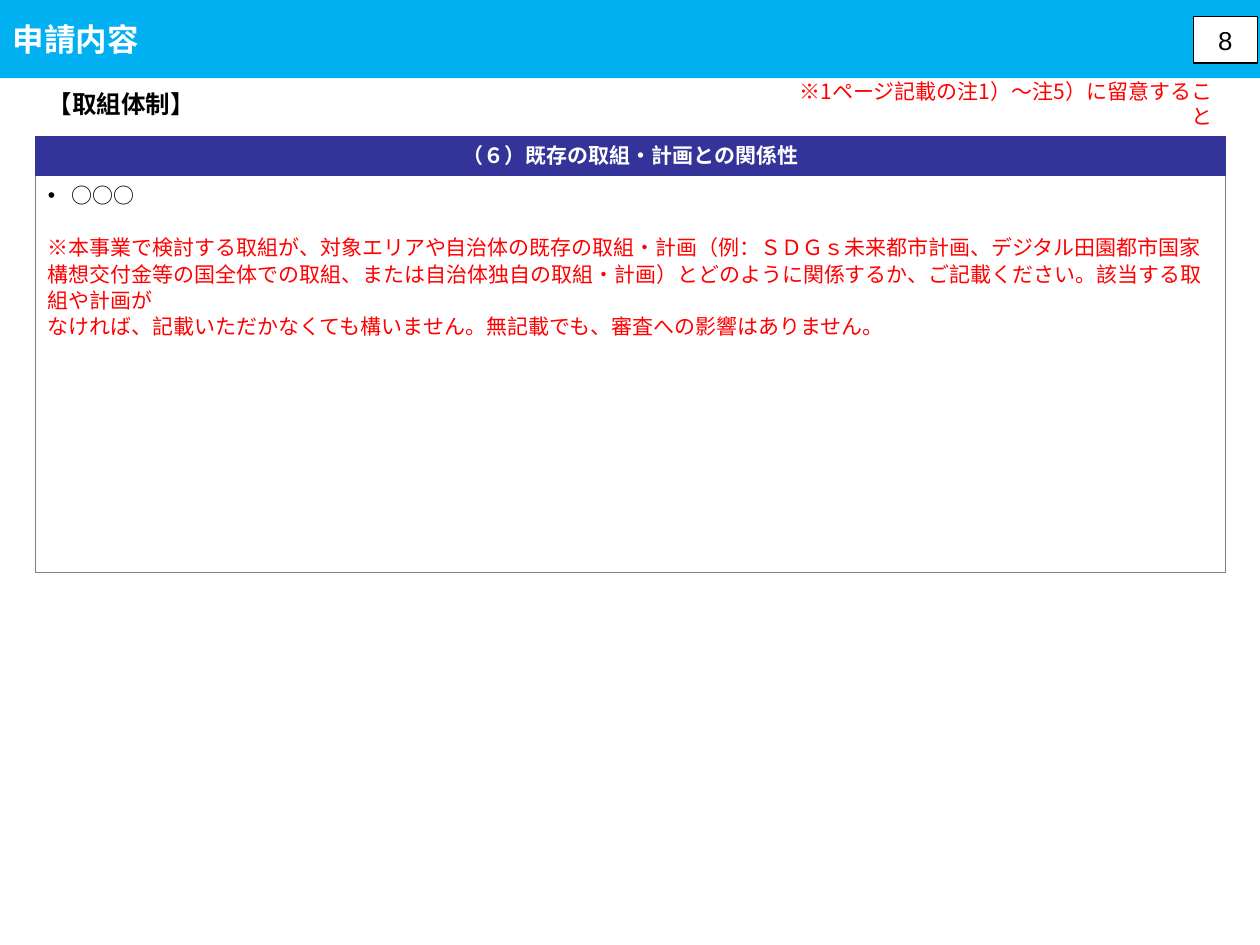
from dataclasses import dataclass

from pptx import Presentation
from pptx.dml.color import RGBColor
from pptx.enum.shapes import MSO_SHAPE as Shape
from pptx.enum.text import MSO_ANCHOR as Anchor, MSO_AUTO_SIZE as AutoSize, PP_ALIGN as Align
from pptx.oxml.ns import qn
from pptx.util import Inches, Pt


@dataclass(frozen=True)
class Theme:
    japanese: str = "Noto Sans CJK JP"
    latin: str = "Arial"
    sky: str = "00B0F0"
    navy: str = "333399"
    gray: str = "808080"
    red: str = "FF0000"
    black: str = "000000"
    white: str = "FFFFFF"
    title: float = 18
    subtitle: float = 14
    number: float = 14.8
    body: float = 12


theme = Theme()


def write(shape, text, size=theme.body, color=theme.black, bold=False, font=theme.japanese,
          align=Align.LEFT, anchor=Anchor.TOP, bullet=None, line=None, before=0):
    """Fill the empty first paragraph of a shape, or add one after it."""
    frame = shape.text_frame
    frame.word_wrap, frame.auto_size, frame.vertical_anchor = True, AutoSize.NONE, anchor
    paragraph = frame.add_paragraph() if frame.text else frame.paragraphs[0]
    paragraph.text = text
    properties = paragraph._p.get_or_add_pPr()
    indent = Inches(0.19) if bullet else 0
    properties.set("marL", str(indent))
    properties.set("indent", str(-indent))
    if bullet:
        mark_font = properties.makeelement(qn("a:buFont"), {"typeface": theme.latin})
        mark = properties.makeelement(qn("a:buChar"), {"char": bullet})
        properties.extend([mark_font, mark])
    else:
        properties.append(properties.makeelement(qn("a:buNone"), {}))
    paragraph.alignment = align
    paragraph.space_before = Pt(before)
    if line:
        paragraph.line_spacing = Pt(line)
    for run in paragraph.runs:
        run.font.size, run.font.bold, run.font.name = Pt(size), bold, font
        run.font.color.rgb = RGBColor.from_string(color)
        east_asian = run.font._element.makeelement(qn("a:ea"), {"typeface": font})
        run.font._element.find(qn("a:latin")).addnext(east_asian)


def place(shape, left, top, width, height, fill=None, outline=None, weight=0.5):
    """Set the position, fill and outline of a shape."""
    shape.left, shape.top = Inches(left), Inches(top)
    shape.width, shape.height = Inches(width), Inches(height)
    if fill:
        shape.fill.solid()
        shape.fill.fore_color.rgb = RGBColor.from_string(fill)
    if outline:
        shape.line.color.rgb = RGBColor.from_string(outline)
        shape.line.width = Pt(weight)
    return shape


presentation = Presentation()
presentation.slide_width, presentation.slide_height = Inches(10), Inches(7.5)
slide = presentation.slides.add_slide(presentation.slide_layouts[1])
shapes = slide.shapes
left, width = 0.28, 9.45

# Title band
title = place(shapes.title, 0, 0, 10, 0.62, fill=theme.sky)
write(title, "申請内容", size=theme.title, color=theme.white, bold=True, anchor=Anchor.MIDDLE)

# Page number
number = place(shapes.add_shape(Shape.RECTANGLE, 0, 0, 0, 0), 9.47, 0.13, 0.51, 0.37,
               fill=theme.white, outline=theme.black, weight=0.75)
number.shadow.inherit = False
write(number, "8", size=theme.number, font=theme.latin, align=Align.CENTER, anchor=Anchor.MIDDLE)

# Subtitle and reminder
subtitle = place(shapes.add_textbox(0, 0, 0, 0), left, 0.66, 3.56, 0.34)
write(subtitle, "【取組体制】", size=theme.subtitle, bold=True)
reminder = place(shapes.add_textbox(0, 0, 0, 0), 6.22, 0.67, 3.5, 0.31)
write(reminder, "※1ページ記載の注1）～注5）に留意すること", color=theme.red,
      align=Align.RIGHT, anchor=Anchor.MIDDLE)

# Section heading
heading = place(shapes.add_shape(Shape.RECTANGLE, 0, 0, 0, 0), left, 1.08, width, 0.31,
                fill=theme.navy, outline=theme.navy)
heading.shadow.inherit = False
write(heading, "（６）既存の取組・計画との関係性", color=theme.white, bold=True,
      align=Align.CENTER, anchor=Anchor.MIDDLE)

# Section body
body = place(slide.placeholders[1], left, 1.39, width, 3.15, outline=theme.gray)
write(body, "○○○", bullet="•", line=15)
write(body, "※本事業で検討する取組が、対象エリアや自治体の既存の取組・計画"
            "（例：ＳＤＧｓ未来都市計画、デジタル田園都市国家構想交付金等の国全体での取組、"
            "または自治体独自の取組・計画）とどのように関係するか、ご記載ください。"
            "該当する取組や計画が\v"
            "なければ、記載いただかなくても構いません。無記載でも、審査への影響はありません。",
      color=theme.red, line=15, before=15)

presentation.save("out.pptx")
